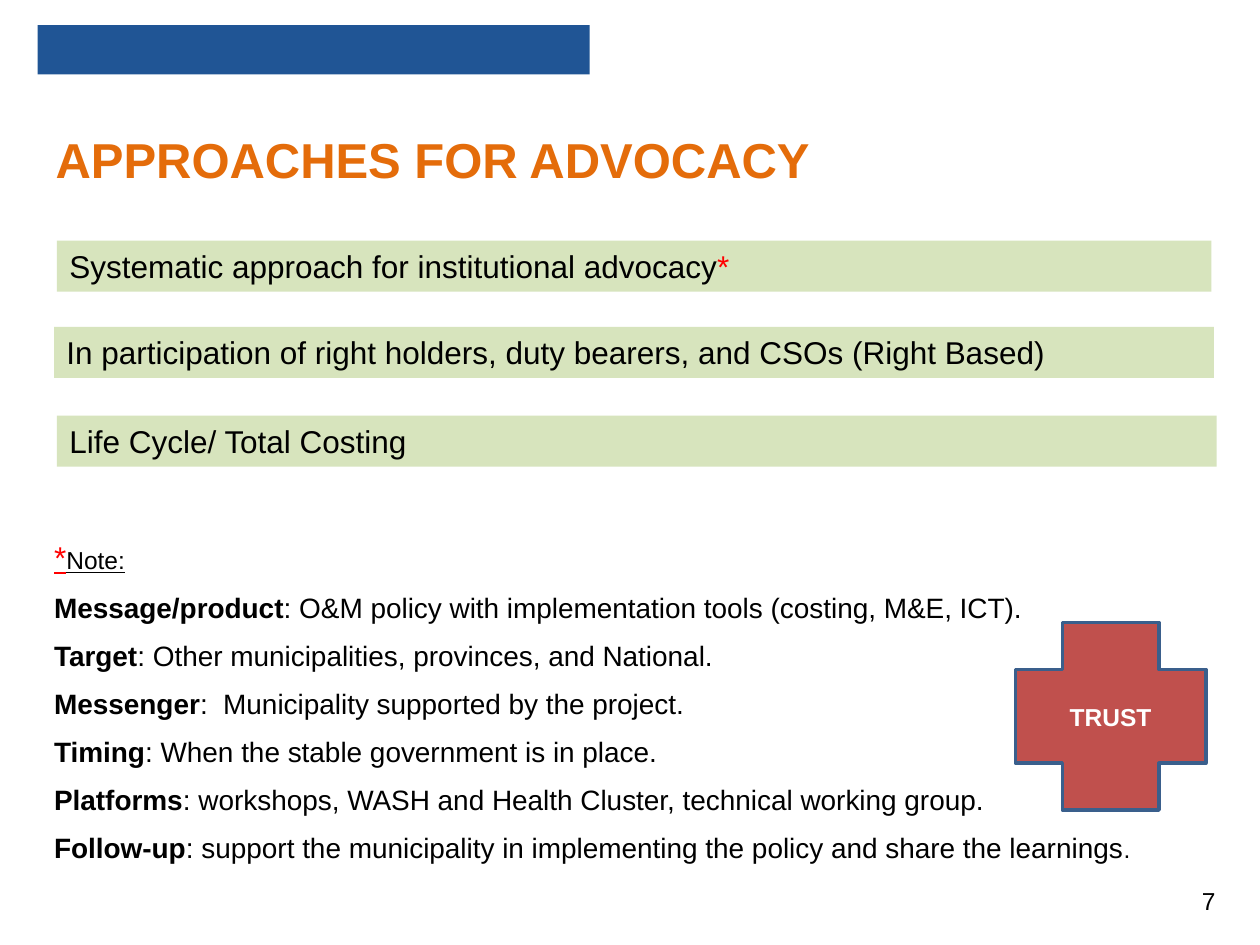
from lxml.etree import SubElement
from pptx import Presentation
from pptx.dml.color import RGBColor
from pptx.enum.shapes import MSO_SHAPE as SHAPE
from pptx.enum.text import MSO_ANCHOR as ANCHOR, MSO_AUTO_SIZE as AUTO, PP_ALIGN as ALIGN
from pptx.oxml.ns import qn
from pptx.util import Cm, Pt

COLORS = {"blue": "205595", "orange": "E46C0A", "green": "D7E4BD", "brick": "C0504D",
          "outline": "3A5F8C", "red": "FF0000", "black": "000000", "white": "FFFFFF"}


def add_run(p, text, color="black", **font):
    r = p.add_run()
    r.text = text
    r.font.name = "Arial"
    r.font.color.rgb = RGBColor.from_string(COLORS[color])
    for name, value in font.items():
        setattr(r.font, name, value)


def add_filled(shape, left, top, width, height, color):
    sp = s.shapes.add_shape(shape, Cm(left), Cm(top), Cm(width), Cm(height))
    sp.shadow.inherit = False
    sp.fill.solid()
    sp.fill.fore_color.rgb = RGBColor.from_string(COLORS[color])
    sp.line.fill.background()
    return sp


prs = Presentation()
prs.slide_width, prs.slide_height = Cm(25.4), Cm(19.05)
s = prs.slides.add_slide(prs.slide_layouts[1])
title, body = s.placeholders

# Header band
add_filled(SHAPE.RECTANGLE, 0.76, 0.51, 11.13, 0.99, "blue")

# Title
title.left, title.top, title.width, title.height = Cm(0.61), Cm(2.57), Cm(24.2), Cm(1.52)
tf = title.text_frame
title_format = {"margin_left": Cm(0.51), "margin_top": Cm(0.03), "margin_right": Cm(0.3),
                "margin_bottom": Cm(0.28), "vertical_anchor": ANCHOR.MIDDLE,
                "auto_size": AUTO.NONE, "word_wrap": True}
for name, value in title_format.items():
    setattr(tf, name, value)
p = tf.paragraphs[0]
p.alignment = ALIGN.LEFT
add_run(p, "APPROACHES FOR ADVOCACY", "orange", size=Pt(28), bold=True)

# Approach bars
bars = [
    (1.15, 4.85, 23.27, [("Systematic approach for institutional advocacy", "black"),
                         ("*", "red")]),
    (1.09, 6.59, 23.38, [("In participation of right holders, duty bearers, "
                          "and CSOs (Right Based)", "black")]),
    (1.15, 8.38, 23.38, [("Life Cycle/ Total Costing", "black")]),
]
for left, top, width, runs in bars:
    tf = add_filled(SHAPE.RECTANGLE, left, top, width, 1.03, "green").text_frame
    tf.vertical_anchor = ANCHOR.TOP
    p = tf.paragraphs[0]
    p.alignment = ALIGN.LEFT
    for text, color in runs:
        add_run(p, text, color, size=Pt(18))

# Notes
body.left, body.top, body.width, body.height = Cm(1.09), Cm(10.7), Cm(23.44), Cm(8)
tf = body.text_frame
notes_format = {"margin_left": 0, "margin_top": 0, "margin_right": 0, "margin_bottom": 0,
                "vertical_anchor": ANCHOR.TOP, "auto_size": AUTO.NONE, "word_wrap": True}
for name, value in notes_format.items():
    setattr(tf, name, value)
notes = [
    ("Message/product", ": O&M policy with implementation tools (costing, M&E, ICT)."),
    ("Target", ": Other municipalities, provinces, and National."),
    ("Messenger", ":  Municipality supported by the project."),
    ("Timing", ": When the stable government is in place."),
    ("Platforms", ": workshops, WASH and Health Cluster, technical working group."),
    ("Follow-up", ": support the municipality in implementing the policy "
                  "and share the learnings"),
]
p = tf.paragraphs[0]
add_run(p, "*", "red", size=Pt(18), underline=True)
add_run(p, "Note:", size=Pt(14), underline=True)
for label, text in notes:
    p = tf.add_paragraph()
    add_run(p, label, size=Pt(16), bold=True)
    add_run(p, text, size=Pt(16), bold=False)
add_run(p, ".", size=Pt(14))
for i, p in enumerate(tf.paragraphs):
    p.line_spacing = 1.2
    p.space_before = Pt(4.4 if i else 0)
    pPr = p._p.get_or_add_pPr()
    pPr.set("marL", "0")
    pPr.set("indent", "0")
    SubElement(pPr, qn("a:buNone"))

# Trust cross
cross = add_filled(SHAPE.CROSS, 20.47, 12.55, 3.84, 3.78, "brick")
cross.line.color.rgb = RGBColor.from_string(COLORS["outline"])
cross.line.width = Pt(2)
cross.text_frame.vertical_anchor = ANCHOR.MIDDLE
p = cross.text_frame.paragraphs[0]
p.alignment = ALIGN.CENTER
add_run(p, "TRUST", "white", size=Pt(14), bold=True)

# Page number
number = s.shapes.add_textbox(Cm(23.98), Cm(17.73), Cm(1.45), Cm(0.86))
number.text_frame.word_wrap = True
add_run(number.text_frame.paragraphs[0], "7", size=Pt(14))

prs.save("out.pptx")
